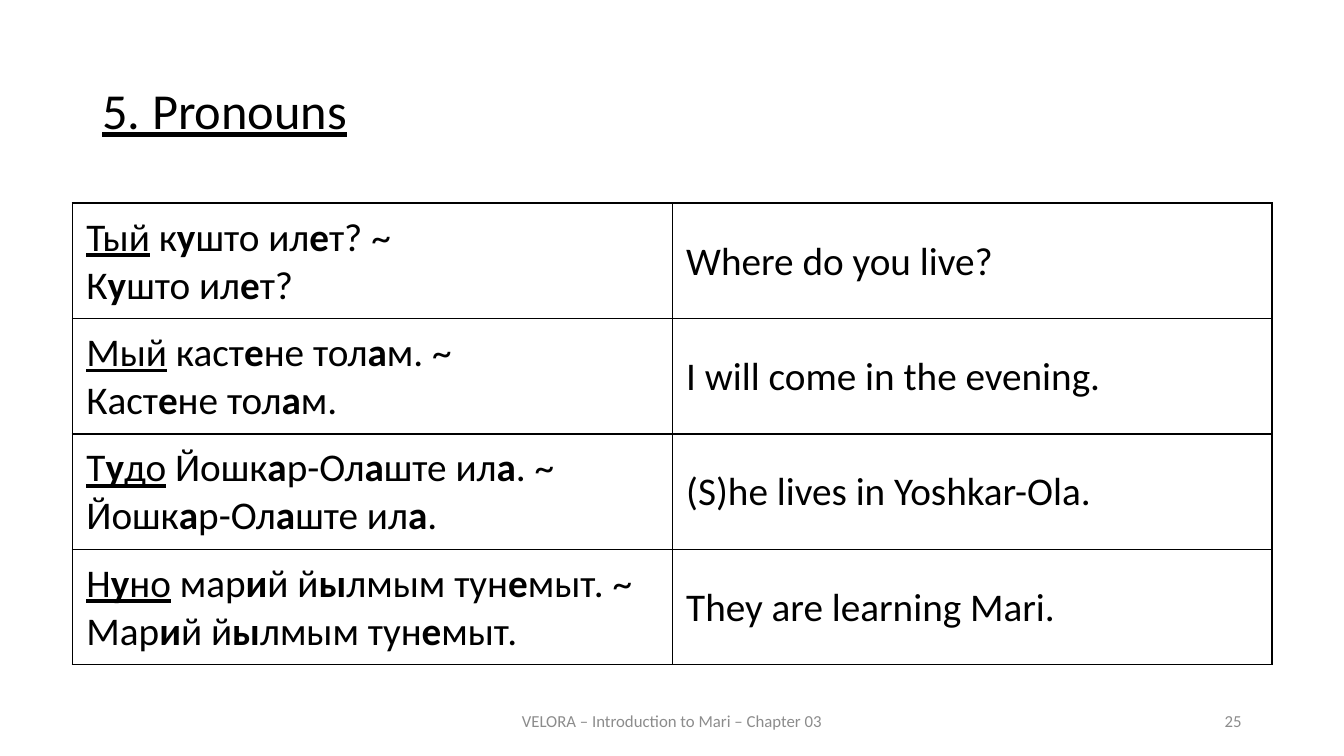
from dataclasses import dataclass

from lxml.etree import SubElement
from pptx import Presentation
from pptx.dml.color import RGBColor
from pptx.enum.text import MSO_ANCHOR, PP_ALIGN
from pptx.oxml.ns import qn
from pptx.slide import Slide
from pptx.table import _Cell
from pptx.text.text import _Paragraph
from pptx.util import Pt


@dataclass(frozen=True)
class Theme:
    font: str = "Calibri"
    ink: str = "000000"
    muted: str = "8C8C8C"
    title_size: float = 36
    body_size: float = 28
    footer_size: float = 12
    outer_line: float = 1.5
    inner_line: float = 1


@dataclass(frozen=True)
class Example:
    """A sentence with an optional pronoun; asterisks enclose stressed vowels."""
    pronoun: str
    sentence: str
    translation: str


@dataclass(frozen=True)
class FooterItem:
    text: str
    left: float
    width: float
    alignment: PP_ALIGN


THEME = Theme()

EXAMPLES = [
    Example("Тый", "к*у*што ил*е*т?", "Where do you live?"),
    Example("Мый", "каст*е*не тол*а*м.", "I will come in the evening."),
    Example("Т*у*до", "Йошк*а*р-Ол*а*ште ил*а*.", "(S)he lives in Yoshkar-Ola."),
    Example("Н*у*но", "мар*и*й й*ы*лмым тун*е*мыт.", "They are learning Mari."),
]

FOOTER_ITEMS = [
    FooterItem("VELORA – Introduction to Mari – Chapter 03", 318, 324, PP_ALIGN.CENTER),
    FooterItem("25", 678, 216, PP_ALIGN.RIGHT),
]

TABLE_LEFT, TABLE_TOP = 51.8, 145.2
COLUMN_WIDTH, ROW_HEIGHT = 428.4, 82.4


def add_runs(paragraph: _Paragraph, text: str, size: float, color: str = THEME.ink,
             underline: bool = False) -> None:
    """Add one run per piece; pieces between asterisks are bold."""
    for index, piece in enumerate(text.split("*")):
        if not piece:
            continue
        run = paragraph.add_run()
        run.text = piece
        run.font.name = THEME.font
        run.font.size = Pt(size)
        run.font.color.rgb = RGBColor.from_string(color)
        run.font.bold = index % 2 == 1
        run.font.underline = underline


def add_title(slide: Slide, text: str) -> None:
    title = slide.shapes.title
    title.left, title.top, title.width, title.height = Pt(66), Pt(28.8), Pt(828), Pt(104.4)
    title.text_frame.vertical_anchor = MSO_ANCHOR.MIDDLE
    paragraph = title.text_frame.paragraphs[0]
    paragraph.alignment = PP_ALIGN.LEFT
    paragraph.line_spacing = 0.9
    paragraph.space_before = Pt(12)
    add_runs(paragraph, text, THEME.title_size, underline=True)


def add_footer_item(slide: Slide, item: FooterItem) -> None:
    box = slide.shapes.add_textbox(Pt(item.left), Pt(500.5), Pt(item.width), Pt(28.8))
    box.text_frame.word_wrap = True
    box.text_frame.vertical_anchor = MSO_ANCHOR.MIDDLE
    paragraph = box.text_frame.paragraphs[0]
    paragraph.alignment = item.alignment
    add_runs(paragraph, item.text, THEME.footer_size, THEME.muted)


def format_cell(cell: _Cell, row: int, column: int) -> None:
    cell.vertical_anchor = MSO_ANCHOR.MIDDLE
    cell.margin_left = cell.margin_right = Pt(10)
    cell.margin_top, cell.margin_bottom = Pt(1.4), Pt(0)

    # Borders, heavier along the outside of the table
    outer_sides = {
        "a:lnL": column == 0,
        "a:lnR": column == 1,
        "a:lnT": row == 0,
        "a:lnB": row == len(EXAMPLES) - 1,
    }
    properties = cell._tc.get_or_add_tcPr()
    for tag, is_outer in outer_sides.items():
        width = THEME.outer_line if is_outer else THEME.inner_line
        border = SubElement(properties, qn(tag), w=str(Pt(width)))
        fill = SubElement(border, qn("a:solidFill"))
        SubElement(fill, qn("a:srgbClr"), val=THEME.ink)
    cell.fill.background()


def add_example_table(slide: Slide) -> None:
    frame = slide.shapes.add_table(
        len(EXAMPLES), 2, Pt(TABLE_LEFT), Pt(TABLE_TOP),
        Pt(2 * COLUMN_WIDTH), Pt(len(EXAMPLES) * ROW_HEIGHT))
    table = frame.table
    table.first_row = table.horz_banding = False
    for column in table.columns:
        column.width = Pt(COLUMN_WIDTH)

    for row, example in enumerate(EXAMPLES):
        table.rows[row].height = Pt(ROW_HEIGHT)
        mari, english = table.cell(row, 0), table.cell(row, 1)
        format_cell(mari, row, 0)
        format_cell(english, row, 1)

        # With the pronoun, then without it
        with_pronoun = mari.text_frame.paragraphs[0]
        add_runs(with_pronoun, example.pronoun, THEME.body_size, underline=True)
        add_runs(with_pronoun, f" {example.sentence} ~", THEME.body_size)
        capitalized = example.sentence[0].upper() + example.sentence[1:]
        add_runs(mari.text_frame.add_paragraph(), capitalized, THEME.body_size)

        add_runs(english.text_frame.paragraphs[0], example.translation, THEME.body_size)


def main() -> None:
    presentation = Presentation()
    presentation.slide_width, presentation.slide_height = Pt(960), Pt(540)
    slide = presentation.slides.add_slide(presentation.slide_layouts[5])

    for item in FOOTER_ITEMS:
        add_footer_item(slide, item)
    add_title(slide, "5. Pronouns")
    add_example_table(slide)

    presentation.save("out.pptx")


if __name__ == "__main__":
    main()
